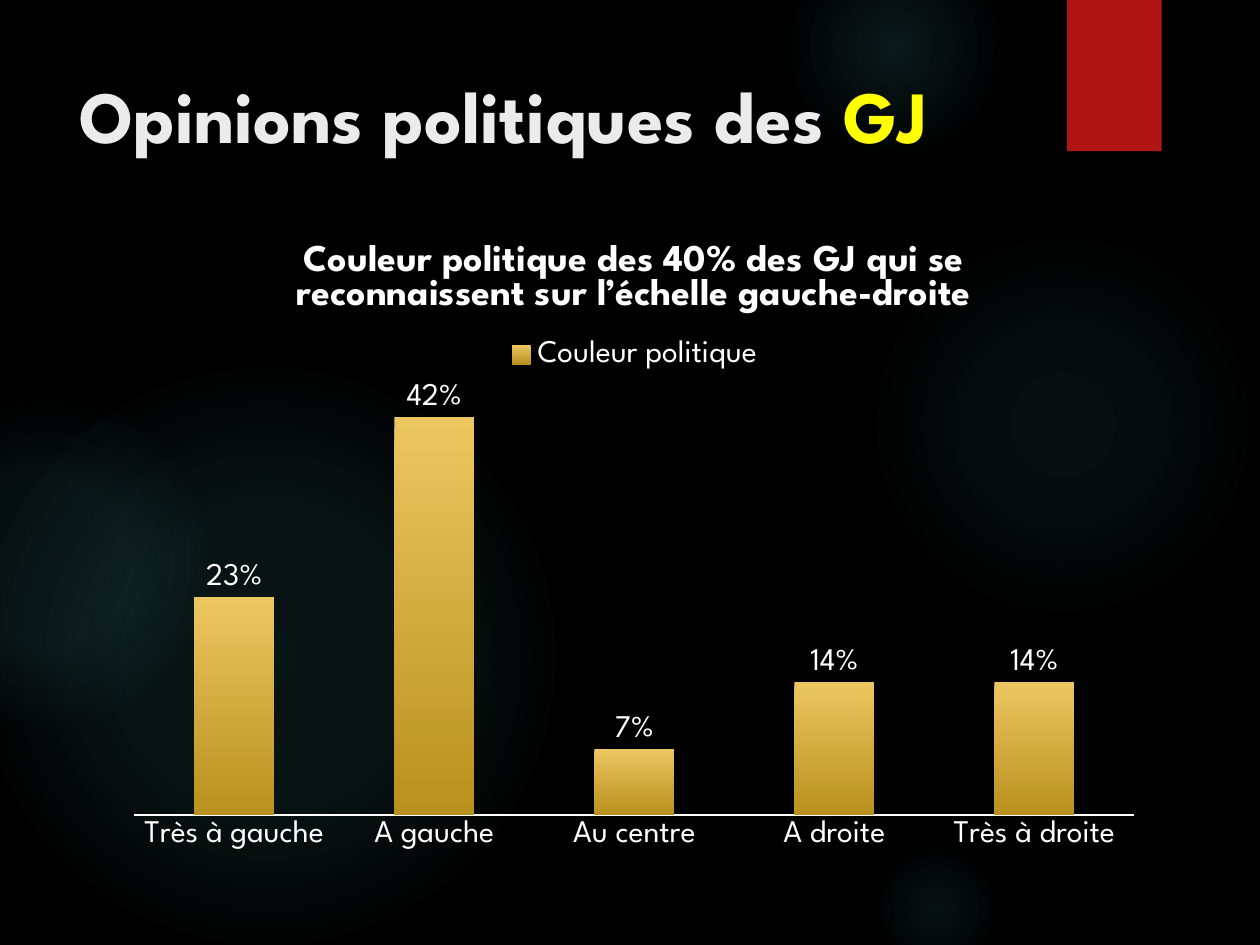
from pptx import Presentation
from pptx.chart.data import CategoryChartData
from pptx.dml.color import RGBColor
from pptx.enum.chart import XL_CHART_TYPE, XL_LABEL_POSITION, XL_LEGEND_POSITION, XL_TICK_MARK
from pptx.enum.shapes import MSO_SHAPE
from pptx.enum.text import MSO_ANCHOR, PP_ALIGN
from pptx.oxml import parse_xml
from pptx.oxml.ns import nsdecls, qn
from pptx.util import Inches, Pt

BLACK = RGBColor(0x00, 0x00, 0x00)
WHITE = RGBColor(0xFF, 0xFF, 0xFF)
PALE = RGBColor(0xEB, 0xEB, 0xEB)
YELLOW = RGBColor(0xFF, 0xFF, 0x00)
RED = RGBColor(0xB0, 0x15, 0x13)
TEAL = RGBColor(0x50, 0xB9, 0xC1)
GOLD_LIGHT = RGBColor(0xEC, 0xC6, 0x60)
GOLD_DARK = RGBColor(0xB8, 0x91, 0x1E)
FONT = "League Spartan"

# Left, top, diameter, then (position, opacity) stops in percent
GLOWS = [
    (6.89, 1.83, 3.08, [(0, 7), (36, 6), (69, 0)]),
    (6.22, -0.5, 1.75, [(0, 14), (36, 7), (73, 0)]),
    (6.89, 6.67, 1.08, [(0, 9), (36, 5), (66, 0)]),
    (-0.17, 2.92, 4.58, [(0, 11), (36, 10), (75, 0)]),
    (-0.92, 3.17, 2.58, [(0, 8), (36, 8), (72, 0)]),
]
OPINIONS = {"Très à gauche": 0.23, "A gauche": 0.42, "Au centre": 0.07,
            "A droite": 0.14, "Très à droite": 0.14}


class Deck:
    """Style and current slide; lengths are in a grid of 10 columns by 7.5 rows."""

    def __init__(self):
        self.prs = Presentation()
        self.prs.slide_width, self.prs.slide_height = Inches(10), Inches(7.5)
        self.s = self.prs.slides.add_slide(self.prs.slide_layouts[5])
        fill = self.s.background.fill
        fill.solid()
        fill.fore_color.rgb = BLACK

    def box(self, *cells):
        return [Inches(c) for c in cells]

    def style(self, font, **values):
        color = values.pop("color", WHITE)
        for name, value in {"name": FONT, "bold": False, **values}.items():
            setattr(font, name, value)
        font.color.rgb = color

    def shape(self, kind, *cells):
        sp = self.s.shapes.add_shape(kind, *self.box(*cells))
        sp.shadow.inherit = False
        sp.line.fill.background()
        return sp

    def glow(self, left, top, size, stops):
        sp = self.shape(MSO_SHAPE.OVAL, left, top, size, size)
        sp.fill.background()
        gs = "".join(f'<a:gs pos="{pos * 1000}"><a:srgbClr val="{TEAL}">'
                     f'<a:alpha val="{alpha * 1000}"/></a:srgbClr></a:gs>'
                     for pos, alpha in stops)
        spPr = sp.element.spPr
        spPr.replace(spPr.find(qn("a:noFill")), parse_xml(
            f'<a:gradFill {nsdecls("a")}><a:gsLst>{gs}</a:gsLst><a:path path="circle">'
            '<a:fillToRect l="50000" t="50000" r="50000" b="50000"/></a:path></a:gradFill>'))

    def tab(self, *cells):
        sp = self.shape(MSO_SHAPE.RECTANGLE, *cells)
        sp.fill.solid()
        sp.fill.fore_color.rgb = RED
        sp.element.spPr.find(qn("a:effectLst")).append(parse_xml(
            f'<a:outerShdw {nsdecls("a")} blurRad="{Pt(3)}" dist="{Pt(2)}" dir="5400000">'
            '<a:srgbClr val="000000"><a:alpha val="45000"/></a:srgbClr></a:outerShdw>'))

    def title(self, runs, *cells):
        sp = self.s.shapes.title
        self.s.shapes.element.append(sp.element)  # in front of the decoration
        sp.left, sp.top, sp.width, sp.height = self.box(*cells)
        tf = sp.text_frame
        tf.word_wrap, tf.vertical_anchor = True, MSO_ANCHOR.MIDDLE
        p = tf.paragraphs[0]
        p.alignment = PP_ALIGN.LEFT
        for text, color in runs:
            r = p.add_run()
            r.text = text
            self.style(r.font, size=Pt(42), bold=True, color=color)

    def columns(self, heading, series, values, *cells):
        data = CategoryChartData(number_format="0%")
        data.categories = list(values)
        data.add_series(series, list(values.values()))
        chart = self.s.shapes.add_chart(
            XL_CHART_TYPE.COLUMN_CLUSTERED, *self.box(*cells), data).chart
        self.style(chart.font, size=Pt(18))

        # Heading and legend
        chart.has_title = True
        p = chart.chart_title.text_frame.paragraphs[0]
        r = p.add_run()
        r.text = heading
        self.style(r.font, size=Pt(21.6), bold=True)
        chart.chart_title.include_in_layout = False
        chart.has_legend = True
        chart.legend.position = XL_LEGEND_POSITION.TOP
        chart.legend.include_in_layout = False

        # Axes
        axis = chart.category_axis
        axis.major_tick_mark = axis.minor_tick_mark = XL_TICK_MARK.NONE
        axis.format.line.color.rgb = WHITE
        axis.format.line.width = Pt(1.5)
        axis = chart.value_axis
        axis.visible = axis.has_major_gridlines = False
        axis.minimum_scale, axis.maximum_scale = 0, 0.45

        # Bars and labels
        plot = chart.plots[0]
        plot.gap_width, plot.vary_by_categories = 150, False
        fill = plot.series[0].format.fill
        fill.gradient()
        fill.gradient_angle = 270
        for stop, color in zip(fill.gradient_stops, (GOLD_LIGHT, GOLD_DARK)):
            stop.color.rgb = color
        plot.has_data_labels = True
        labels = plot.data_labels
        for name, value in {"show_value": True, "number_format": "0%",
                            "number_format_is_linked": False,
                            "position": XL_LABEL_POSITION.OUTSIDE_END}.items():
            setattr(labels, name, value)
        self.style(labels.font, size=Pt(18))

        # Plot area as shares of the chart
        area = chart.element.chart.plotArea
        for old in area.findall(qn("c:layout")):
            area.remove(old)
        shares = "".join(f'<c:{k} val="{v}"/>' for k, v in
                         {"x": 0.02, "y": 0.27, "w": 0.96, "h": 0.66}.items())
        area.insert(0, parse_xml(
            f'<c:layout {nsdecls("c")}><c:manualLayout><c:layoutTarget val="inner"/>'
            f'<c:xMode val="edge"/><c:yMode val="edge"/>{shares}</c:manualLayout></c:layout>'))


def main():
    deck = Deck()
    # Background decoration
    for glow in GLOWS:
        deck.glow(*glow)
    deck.tab(8.47, 0, 0.75, 1.2)
    # Title and chart
    deck.title([("Opinions politiques des ", PALE), ("GJ", YELLOW)], 0.53, 0.5, 7.72, 0.81)
    deck.columns("Couleur politique des 40% des GJ qui se reconnaissent sur l’échelle gauche-droite",
                 "Couleur politique", OPINIONS, 0.9, 1.7, 8.27, 5.13)
    deck.prs.save("out.pptx")


if __name__ == "__main__":
    main()
